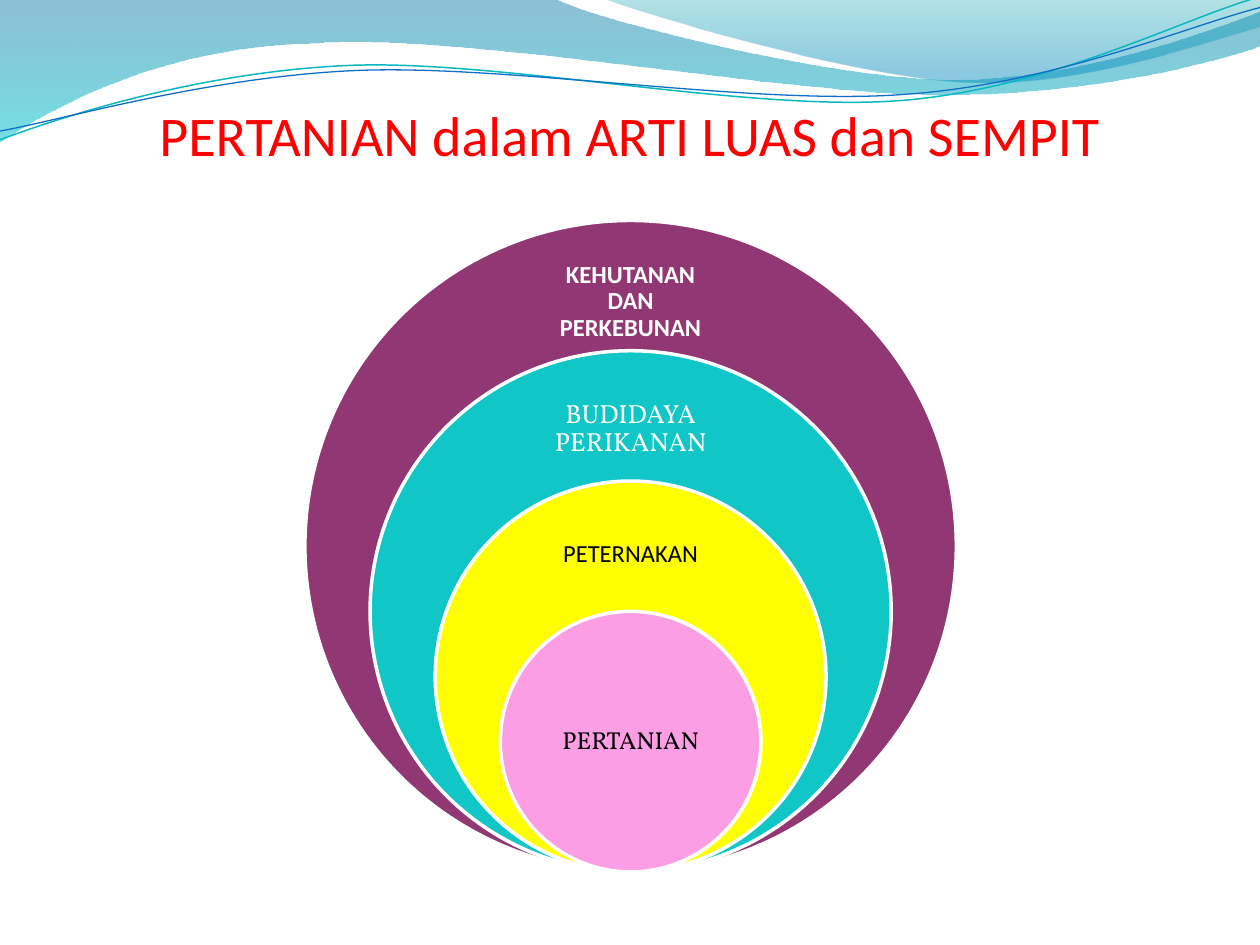
from pptx import Presentation, util as u
from pptx.dml import color
from pptx.enum import shapes as sh, text as tx
from pptx.oxml import ns, xmlchemy

SLIDE_W, SLIDE_H = 10, 7.5

BROAD_WAVE = [
    (0, 0), [(4.4, -0.01)],
    [(4.76, 0.17), (6.64, 0.63), (7.58, 0.63)],
    [(8.53, 0.63), (9.58, 0.26), (10, 0.09)],
    [(10.01, 0.36)],
    [(9.83, 0.44), (8.7, 0.76), (7.46, 0.75)],
    [(6.22, 0.75), (3.82, 0.28), (2.57, 0.34)],
    [(1.29, 0.36), (0.46, 0.83), (-0.01, 1.13)],
    [(0, 0)],
]
RIGHT_WAVE = [
    (4.79, -0.01),
    [(5.09, 0.11), (6.82, 0.62), (7.69, 0.65)],
    [(8.56, 0.69), (9.61, 0.32), (10, 0.21)],
    [(10, 0)], [(4.79, -0.01)],
]
TEAL_STRAND = [
    (0, 1.11),
    [(0.48, 0.93), (1.58, 0.57), (2.77, 0.52)],
    [(3.95, 0.47), (5.93, 0.89), (7.13, 0.8)],
    [(8.33, 0.71), (9.38, 0.15), (9.98, -0.02)],
]
BLUE_STRAND = [
    (0, 1.04),
    [(0.47, 0.96), (1.64, 0.61), (2.83, 0.56)],
    [(4.03, 0.51), (5.97, 0.84), (7.17, 0.75)],
    [(8.36, 0.67), (9.41, 0.21), (10, 0.06)],
]
RINGS = [
    ("KEHUTANAN DAN PERKEBUNAN", "913773", 0.05, 0.15,
     dict(size=14, font="Calibri", colour="FFFFFF", bold=True)),
    ("BUDIDAYA PERIKANAN", "10C6C6", 0.06, 0.18,
     dict(size=15, font="Vollkorn", colour="FFFFFF")),
    ("PETERNAKAN", "FFFF00", 0.075, 0.225,
     dict(size=14, font="Calibri", colour="000000")),
    ("PERTANIAN", "FC9EE3", 0.25, 0.5,
     dict(size=14, font="Vollkorn", colour="000000")),
]


def rgb(value):
    """Turn a hex string into a colour."""
    return color.RGBColor.from_string(value)


def write(shape, words, size, font, colour, bold=False, spacing=1.0,
          anchor=tx.MSO_ANCHOR.MIDDLE, insets=(0.11,) * 4):
    """Put centred, formatted text into a shape."""
    frame = shape.text_frame
    frame.word_wrap = True
    frame.auto_size = tx.MSO_AUTO_SIZE.NONE
    frame.vertical_anchor = anchor
    (frame.margin_left, frame.margin_top,
     frame.margin_right, frame.margin_bottom) = map(u.Inches, insets)
    paragraph = frame.paragraphs[0]
    paragraph.alignment = tx.PP_ALIGN.CENTER
    paragraph.line_spacing = spacing
    run = paragraph.add_run()
    run.text = words
    run.font.size = u.Pt(size)
    run.font.name = font
    run.font.bold = bold
    run.font.color.rgb = rgb(colour)


def add_curve(slide, box, outline, closed):
    """Draw an outline whose three-point steps are Bézier curves."""
    left, top = box
    start, *steps = outline
    points = [(u.Inches(left + x), u.Inches(top + y))
              for step in steps for x, y in step]
    builder = slide.shapes.build_freeform(
        u.Inches(left + start[0]), u.Inches(top + start[1]))
    builder.add_line_segments(points, close=closed)
    curve = builder.convert_to_shape()
    curve.shadow.inherit = False
    segments = iter(curve._element.findall(".//" + ns.qn("a:lnTo")))
    for step in steps:
        first = next(segments)
        if len(step) == 3:
            bezier = xmlchemy.OxmlElement("a:cubicBezTo")
            first.addprevious(bezier)
            for segment in (first, next(segments), next(segments)):
                bezier.append(segment[0])
                segment.getparent().remove(segment)
    return curve


def add_wave(slide, box, outline, stops):
    """Draw a wave with a translucent downward gradient."""
    wave = add_curve(slide, box, outline, True)
    wave.line.fill.background()
    wave.fill.gradient()
    wave.fill.gradient_angle = 270
    for stop, (position, colour, opacity) in zip(wave.fill.gradient_stops, stops):
        stop.position = position
        stop.color.rgb = rgb(colour)
        alpha = xmlchemy.OxmlElement("a:alpha")
        alpha.set("val", str(opacity * 1000))
        stop._gs.find(ns.qn("a:srgbClr")).append(alpha)


def add_strand(slide, box, outline, colour, width):
    """Draw a thin curved line."""
    strand = add_curve(slide, box, outline, False)
    strand.fill.background()
    strand.line.color.rgb = rgb(colour)
    strand.line.width = u.Pt(width)


def add_banner(slide, box):
    """Draw the waves and strands along the top of the slide."""
    add_wave(slide, box, BROAD_WAVE, [(0, "0074A1", 45), (1, "00C6CF", 55)])
    add_wave(slide, box, RIGHT_WAVE, [(0, "00A1A9", 30), (0.8, "008BBF", 45)])
    add_strand(slide, box, TEAL_STRAND, "0AB8BF", 0.85)
    add_strand(slide, box, BLUE_STRAND, "0F6FC6", 0.75)


def add_title(slide, box, words):
    """Place the title above the banner in stacking order."""
    title = slide.shapes.title
    title.left, title.top, title.width, title.height = map(u.Inches, box)
    write(title, words, 32, "Calibri", "FF0000",
          anchor=tx.MSO_ANCHOR.BOTTOM, insets=(0, 0.05, 0, 0))
    slide.shapes._spTree.append(title._element)


def add_rings(slide, box, label_width=1.44):
    """Nest circles that share the bottom of a square box."""
    left, top, side = box
    centre, bottom = left + side / 2, top + side
    for index, (words, fill, offset, share, style) in enumerate(RINGS):
        diameter = side * (1 - index / 5)
        ring_top = bottom - diameter
        ring = slide.shapes.add_shape(
            sh.MSO_SHAPE.OVAL, u.Inches(centre - diameter / 2),
            u.Inches(ring_top), u.Inches(diameter), u.Inches(diameter))
        ring.shadow.inherit = False
        ring.fill.solid()
        ring.fill.fore_color.rgb = rgb(fill)
        ring.line.color.rgb = rgb("FFFFFF")
        ring.line.width = u.Pt(2)
        label = slide.shapes.add_textbox(
            u.Inches(centre - label_width / 2),
            u.Inches(ring_top + offset * diameter),
            u.Inches(label_width), u.Inches(share * diameter))
        write(label, words, spacing=0.9, **style)


def main():
    """Build and save the slide."""
    deck = Presentation()
    deck.slide_width, deck.slide_height = u.Inches(SLIDE_W), u.Inches(SLIDE_H)
    slide = deck.slides.add_slide(deck.slide_layouts[5])
    add_banner(slide, (0, 0))
    add_title(slide, (0.5, 0.58, 9, 0.75), "PERTANIAN dalam ARTI LUAS dan SEMPIT")
    add_rings(slide, (2.42, 1.75, 5.17))
    deck.save("out.pptx")


if __name__ == "__main__":
    main()
